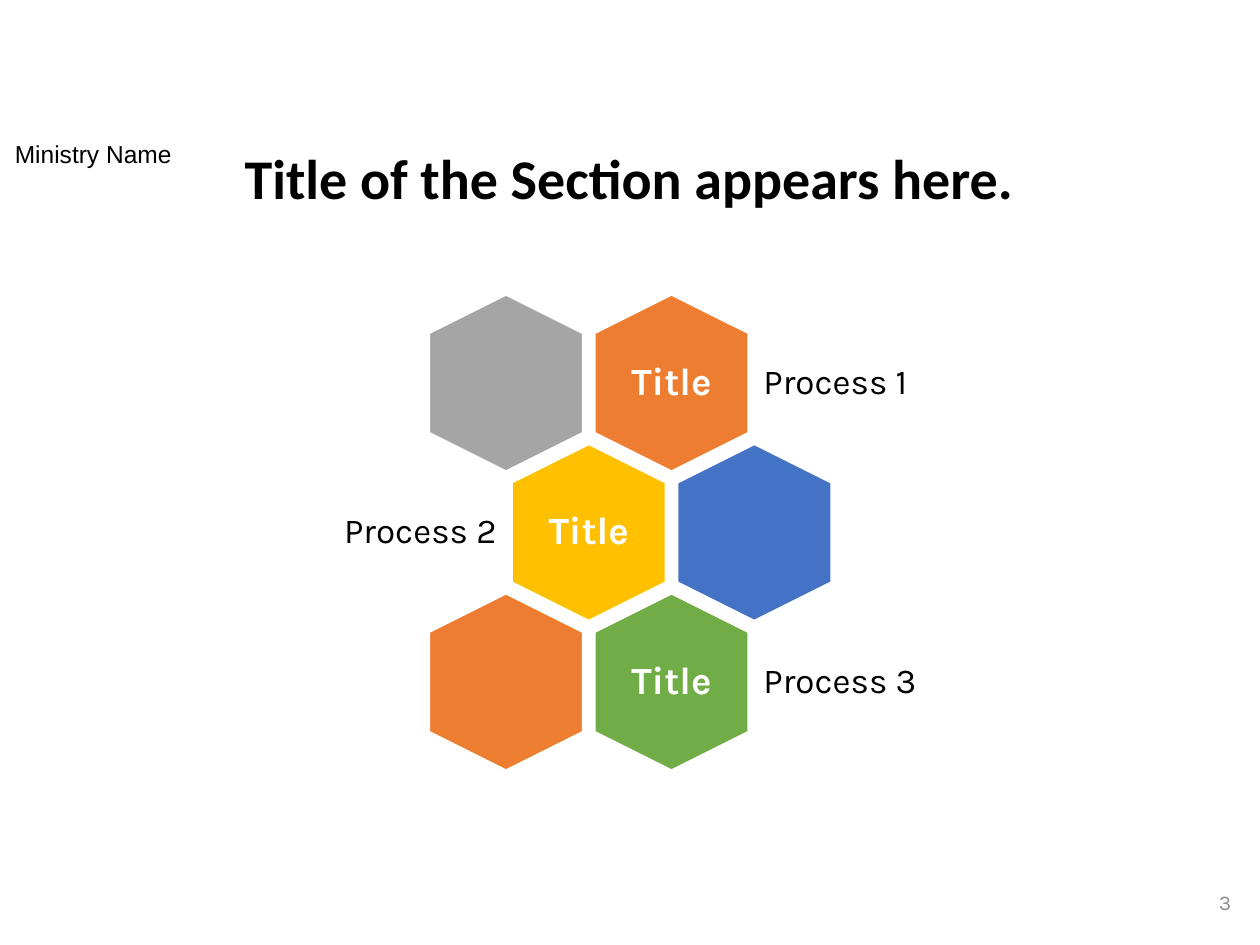
from dataclasses import dataclass

from pptx import Presentation
from pptx.dml.color import RGBColor
from pptx.enum.shapes import MSO_SHAPE
from pptx.enum.text import MSO_ANCHOR, PP_ALIGN
from pptx.util import Pt


@dataclass(frozen=True)
class Theme:
    black: str = "000000"
    white: str = "FFFFFF"
    muted: str = "8C8C8C"
    orange: str = "ED7D31"
    grey: str = "A5A5A5"
    gold: str = "FFC000"
    blue: str = "4472C4"
    green: str = "70AD47"
    heading_font: str = "Calibri"
    ministry_font: str = "Arial"
    diagram_font: str = "Karla"
    heading_size: int = 32
    hexagon_size: int = 22
    process_size: int = 20
    ministry_size: int = 14
    number_size: int = 12


THEME = Theme()
HEXAGON_HEIGHT, HEXAGON_WIDTH = 100.8, 87.84
COLUMN_STEP, ROW_STEP = 94.6, 85.4


def add_text(shapes, box, text, font, size, color, align=PP_ALIGN.CENTER,
             bold=False, anchor=MSO_ANCHOR.MIDDLE, inset=None, spacing=0.9):
    frame = shapes.add_textbox(*map(Pt, box)).text_frame
    frame.word_wrap = True
    frame.vertical_anchor = anchor
    if inset is not None:
        frame.margin_left = frame.margin_right = Pt(inset)
        frame.margin_top = frame.margin_bottom = Pt(inset)
    paragraph = frame.paragraphs[0]
    paragraph.text = text
    paragraph.alignment = align
    paragraph.line_spacing = spacing
    paragraph.font.name = font
    paragraph.font.size = Pt(size)
    paragraph.font.bold = bold
    paragraph.font.color.rgb = RGBColor.from_string(color)


def add_hexagon(shapes, center_x, center_y, color):
    hexagon = shapes.add_shape(
        MSO_SHAPE.HEXAGON,
        Pt(center_x - HEXAGON_HEIGHT / 2), Pt(center_y - HEXAGON_WIDTH / 2),
        Pt(HEXAGON_HEIGHT), Pt(HEXAGON_WIDTH))
    hexagon.rotation = 90
    hexagon.adjustments[0] = 0.25
    hexagon.adjustments[1] = 1.1547
    hexagon.shadow.inherit = False
    hexagon.fill.solid()
    hexagon.fill.fore_color.rgb = RGBColor.from_string(color)
    hexagon.line.color.rgb = RGBColor.from_string(THEME.white)
    hexagon.line.width = Pt(1)


def add_process(shapes, center_x, center_y, process, on_left):
    title_width, title_height = 60.5, 69.1
    add_text(shapes, (center_x - title_width / 2, center_y - title_height / 2,
                      title_width, title_height),
             "Title", THEME.diagram_font, THEME.hexagon_size, THEME.white,
             bold=True, inset=6.3)
    label_width, label_height, gap = 112, 60.5, 46.5
    left = center_x - gap - label_width if on_left else center_x + gap
    add_text(shapes, (left, center_y - label_height / 2, label_width, label_height),
             process, THEME.diagram_font, THEME.process_size, THEME.black,
             align=PP_ALIGN.RIGHT if on_left else PP_ALIGN.LEFT, inset=6)


def add_honeycomb(slide, left, top):
    shapes = slide.shapes.add_group_shape().shapes
    rows = [
        ((THEME.grey, THEME.orange), 1, "Process 1"),
        ((THEME.gold, THEME.blue), 0, "Process 2"),
        ((THEME.orange, THEME.green), 1, "Process 3"),
    ]
    for row, (colors, titled_column, process) in enumerate(rows):
        first_x = left + HEXAGON_WIDTH / 2 + row % 2 * COLUMN_STEP / 2
        center_y = top + HEXAGON_HEIGHT / 2 + row * ROW_STEP
        for column, color in enumerate(colors):
            add_hexagon(shapes, first_x + column * COLUMN_STEP, center_y, color)
        add_process(shapes, first_x + titled_column * COLUMN_STEP, center_y,
                    process, on_left=titled_column == 0)


def add_header(slide, ministry_box, heading_box):
    add_text(slide.shapes, heading_box, "Title of the Section appears here.",
             THEME.heading_font, THEME.heading_size, THEME.black,
             bold=True, anchor=MSO_ANCHOR.TOP)
    add_text(slide.shapes, ministry_box, "Ministry Name",
             THEME.ministry_font, THEME.ministry_size, THEME.black,
             anchor=MSO_ANCHOR.TOP)


def add_slide_number(slide, box):
    add_text(slide.shapes, box, "3", THEME.diagram_font, THEME.number_size,
             THEME.muted, align=PP_ALIGN.RIGHT, spacing=1.0)


def main():
    presentation = Presentation()
    presentation.slide_width, presentation.slide_height = Pt(720), Pt(540)
    slide = presentation.slides.add_slide(presentation.slide_layouts[6])
    add_honeycomb(slide, 245.2, 168.5)
    add_slide_number(slide, (548.6, 501, 162, 28.8))
    add_header(slide, (0, 77.8, 106.6, 46.8), (118.8, 82.8, 481.7, 56.9))
    presentation.save("out.pptx")


if __name__ == "__main__":
    main()
